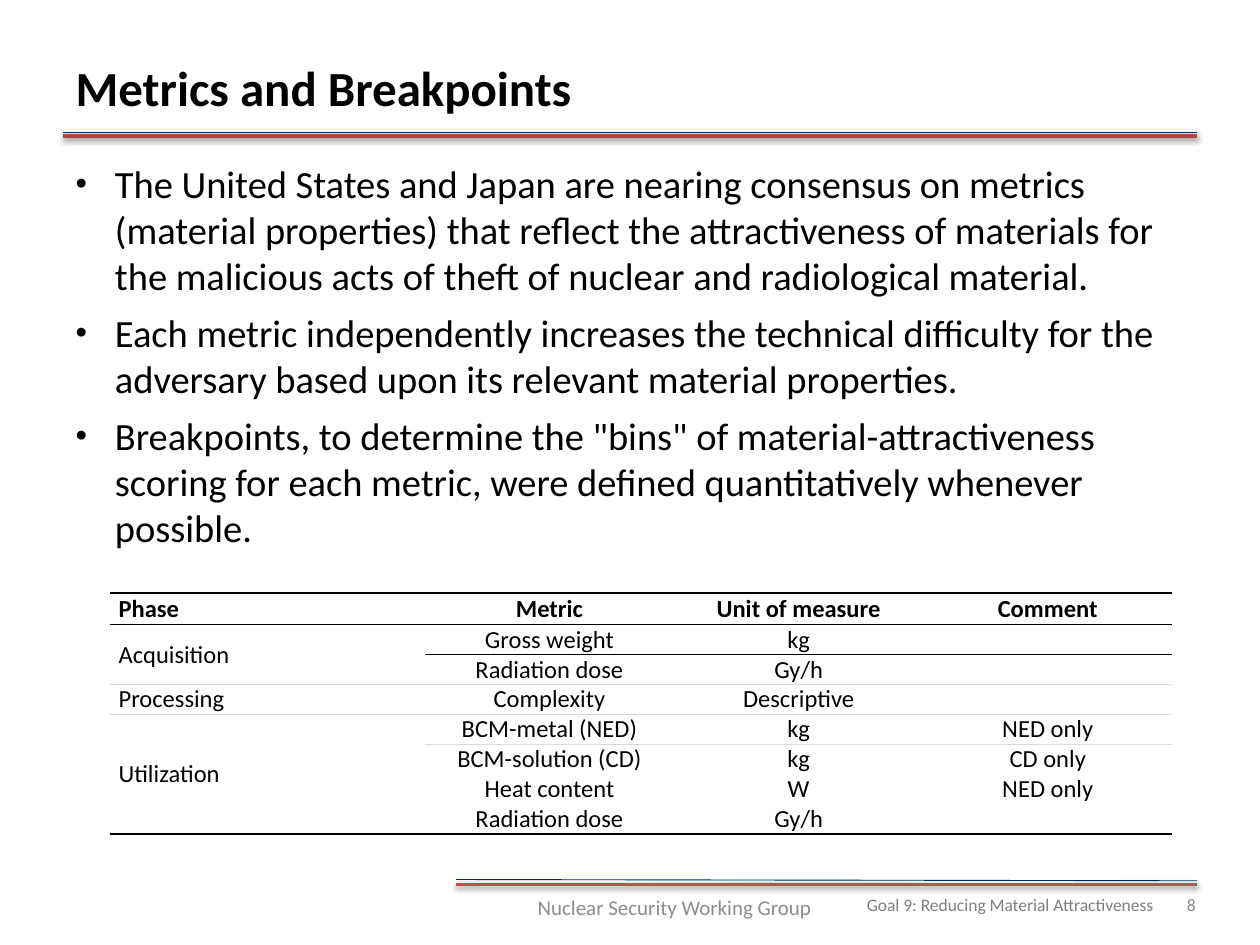
"""Build the Metrics and Breakpoints slide."""
from dataclasses import dataclass

from lxml.etree import SubElement
from pptx import Presentation
from pptx.dml.color import RGBColor as Rgb
from pptx.enum.shapes import MSO_CONNECTOR as Connector
from pptx.enum.text import MSO_ANCHOR as Anchor
from pptx.enum.text import MSO_AUTO_SIZE as AutoSize
from pptx.enum.text import PP_ALIGN as Align
from pptx.oxml import parse_xml
from pptx.oxml.ns import nsdecls, qn
from pptx.util import Pt

FONT = "Calibri"
COLORS = {
    "text": "000000", "red": "C0504D", "navy": "002868", "goal": "808080",
    "group": "8C8C8C", "number": "898989", "divider": "D9D9D9",
}
NO_GRID_STYLE = "{2D5ABB26-0587-4C30-8999-92F81FD0307C}"


@dataclass
class Rule:
    left: float
    start_y: float
    end_y: float
    color: str
    weight: float


@dataclass
class Footer:
    text: str
    left: float
    top: float
    width: float
    height: float
    size: float
    color: str
    align: Align
    anchor: Anchor


@dataclass
class Phase:
    name: str
    metrics: list[tuple[str, str, str]]
    top_color: str
    bottom_color: str
    bold: bool = False


RULE_RIGHT = 684
RULES = [
    Rule(36, 77.76, 77.76, "red", 2),
    Rule(36, 75.6, 75.6, "navy", 0.5),
    Rule(260.6, 502.6, 503.3, "navy", 0.5),
    Rule(260.6, 505.4, 505.4, "red", 2),
]
FOOTERS = [
    Footer("Goal 9: Reducing Material Attractiveness", 390.2, 507.6, 275.8, 19.4,
           10, "goal", Align.RIGHT, Anchor.TOP),
    Footer("Nuclear Security Working Group", 271.4, 504, 228.2, 28.8,
           12, "group", Align.CENTER, Anchor.MIDDLE),
    Footer("8", 660.2, 502.6, 30.2, 28.8,
           10, "number", Align.RIGHT, Anchor.MIDDLE),
]
POINTS = [
    "The United States and Japan are nearing consensus on metrics (material properties) "
    "that reflect the attractiveness of materials for the malicious acts of theft of "
    "nuclear and radiological material.",
    "Each metric independently increases the technical difficulty for the adversary "
    "based upon its relevant material properties.",
    'Breakpoints, to determine the "bins" of material-attractiveness scoring for each '
    "metric, were defined quantitatively whenever possible.",
]
PHASES = [
    Phase("Phase", [("Metric", "Unit of measure", "Comment")], "text", "text", True),
    Phase("Acquisition", [("Gross weight", "kg", ""), ("Radiation dose", "Gy/h", "")],
          "text", "divider"),
    Phase("Processing", [("Complexity", "Descriptive", "")], "divider", "divider"),
    Phase("Utilization", [
        ("BCM-metal (NED)", "kg", "NED only"),
        ("BCM-solution (CD)", "kg", "CD only"),
        ("Heat content", "W", "NED only"),
        ("Radiation dose", "Gy/h", ""),
    ], "divider", "text"),
]
COLUMN_WIDTHS = [180, 142.4, 142.4, 142.4]
HEADER_HEIGHT, METRIC_HEIGHT = 18, 17.1


def format_runs(paragraph, size: float, color: str, bold: bool = False) -> None:
    for run in paragraph.runs:
        run.font.name, run.font.size, run.font.bold = FONT, Pt(size), bold
        run.font.color.rgb = Rgb.from_string(COLORS[color])


def place(shape, left: float, top: float, width: float, height: float) -> None:
    shape.left, shape.top = Pt(left), Pt(top)
    shape.width, shape.height = Pt(width), Pt(height)


def draw_rule(slide, rule: Rule) -> None:
    line = slide.shapes.add_connector(
        Connector.STRAIGHT, Pt(rule.left), Pt(rule.start_y), Pt(RULE_RIGHT), Pt(rule.end_y))
    line.line.color.rgb = Rgb.from_string(COLORS[rule.color])
    line.line.width = Pt(rule.weight)
    line._element.spPr.append(parse_xml(
        f'<a:effectLst {nsdecls("a")}><a:outerShdw blurRad="{Pt(3.1)}" dist="{Pt(1.6)}" '
        'dir="5400000" rotWithShape="0"><a:srgbClr val="000000"><a:alpha val="38000"/>'
        '</a:srgbClr></a:outerShdw></a:effectLst>'))


def draw_footer(slide, footer: Footer) -> None:
    box = slide.shapes.add_textbox(
        Pt(footer.left), Pt(footer.top), Pt(footer.width), Pt(footer.height))
    frame = box.text_frame
    frame.word_wrap, frame.vertical_anchor = True, footer.anchor
    frame.text = footer.text
    frame.paragraphs[0].alignment = footer.align
    format_runs(frame.paragraphs[0], footer.size, footer.color)


def fill_title(title) -> None:
    place(title, 36, 21.6, 648, 56.2)
    frame = title.text_frame
    frame.text = "Metrics and Breakpoints"
    frame.auto_size, frame.vertical_anchor = AutoSize.NONE, Anchor.MIDDLE
    frame.paragraphs[0].alignment = Align.LEFT
    format_runs(frame.paragraphs[0], 28, "text", True)


def fill_body(body) -> None:
    place(body, 36, 87.8, 648, 386.6)
    frame = body.text_frame
    frame.text = "\n".join(POINTS)
    frame.auto_size = AutoSize.NONE
    for index, paragraph in enumerate(frame.paragraphs):
        properties = paragraph._p.get_or_add_pPr()
        properties.set("marL", str(Pt(22.5)))
        properties.set("indent", str(Pt(-22.5)))
        SubElement(properties, qn("a:buSzPct"), val="85000")
        SubElement(properties, qn("a:buFont"), typeface="Arial")
        SubElement(properties, qn("a:buChar"), char="•")
        paragraph.space_before = Pt(3 if index else 0)
        paragraph.space_after = Pt(3)
        format_runs(paragraph, 22, "text")


def add_border(cell, edge: str, color: str) -> None:
    properties = cell._tc.get_or_add_tcPr()
    position = len(properties.findall(qn("a:lnT")))
    properties.insert(position, parse_xml(
        f'<a:{edge} {nsdecls("a")} w="{Pt(1)}"><a:solidFill>'
        f'<a:srgbClr val="{COLORS[color]}"/></a:solidFill></a:{edge}>'))


def fill_cell(cell, text: str, align: Align, bold: bool) -> None:
    cell.margin_left = cell.margin_right = Pt(5)
    cell.margin_top = cell.margin_bottom = 0
    cell.vertical_anchor = Anchor.MIDDLE
    cell.fill.background()
    paragraph = cell.text_frame.paragraphs[0]
    paragraph.text = text
    paragraph.alignment = align
    format_runs(paragraph, 14, "text", bold)
    if not text:
        SubElement(paragraph._p, qn("a:endParaRPr"), sz="1400")


def draw_phase(table, phase: Phase, first: int) -> int:
    last = first + len(phase.metrics) - 1
    for row, metric in enumerate(phase.metrics, first):
        name = phase.name if row == first else ""
        for column, text in enumerate((name, *metric)):
            cell = table.cell(row, column)
            fill_cell(cell, text, Align.CENTER if column else Align.LEFT, phase.bold)
            if row == first:
                add_border(cell, "lnT", phase.top_color)
            if row == last or (column == 0 and row == first):
                add_border(cell, "lnB", phase.bottom_color)
    if last > first:
        table.cell(first, 0).merge(table.cell(last, 0))
    return last + 1


def draw_table(slide) -> None:
    row_count = sum(len(phase.metrics) for phase in PHASES)
    height = HEADER_HEIGHT + METRIC_HEIGHT * (row_count - 1)
    table = slide.shapes.add_table(
        row_count, len(COLUMN_WIDTHS), Pt(62.8), Pt(339), Pt(sum(COLUMN_WIDTHS)),
        Pt(height)).table
    table.first_row = table.horz_banding = False
    table._tbl.tblPr.find(qn("a:tableStyleId")).text = NO_GRID_STYLE
    for column, width in zip(table.columns, COLUMN_WIDTHS):
        column.width = Pt(width)
    for index, row in enumerate(table.rows):
        row.height = Pt(METRIC_HEIGHT if index else HEADER_HEIGHT)
    next_row = 0
    for phase in PHASES:
        next_row = draw_phase(table, phase, next_row)


def main() -> None:
    deck = Presentation()
    deck.slide_width, deck.slide_height = Pt(720), Pt(540)
    slide = deck.slides.add_slide(deck.slide_layouts[1])
    for rule in RULES:
        draw_rule(slide, rule)
    fill_title(slide.shapes.title)
    fill_body(slide.placeholders[1])
    for footer in FOOTERS:
        draw_footer(slide, footer)
    draw_table(slide)
    deck.save("out.pptx")


if __name__ == "__main__":
    main()
